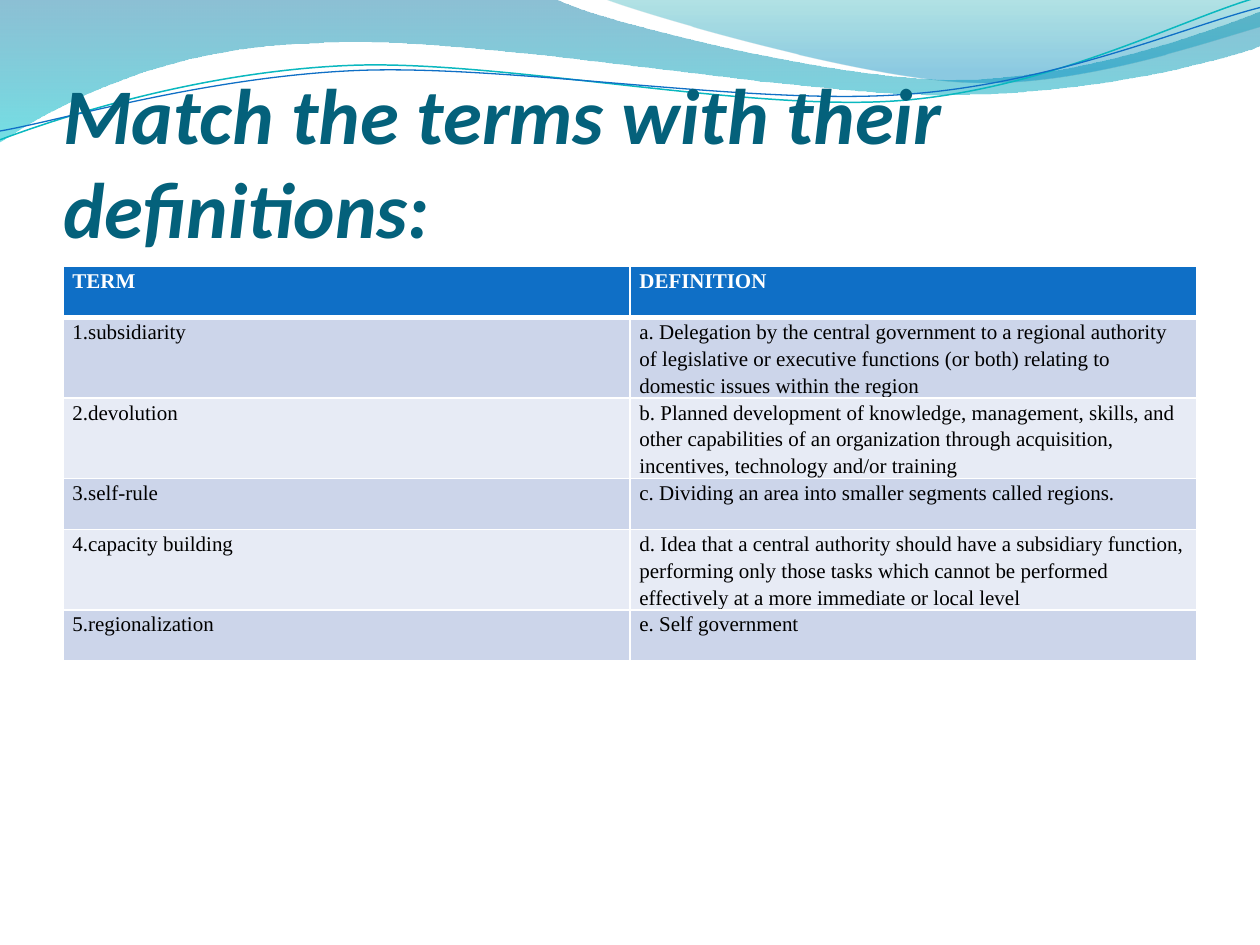
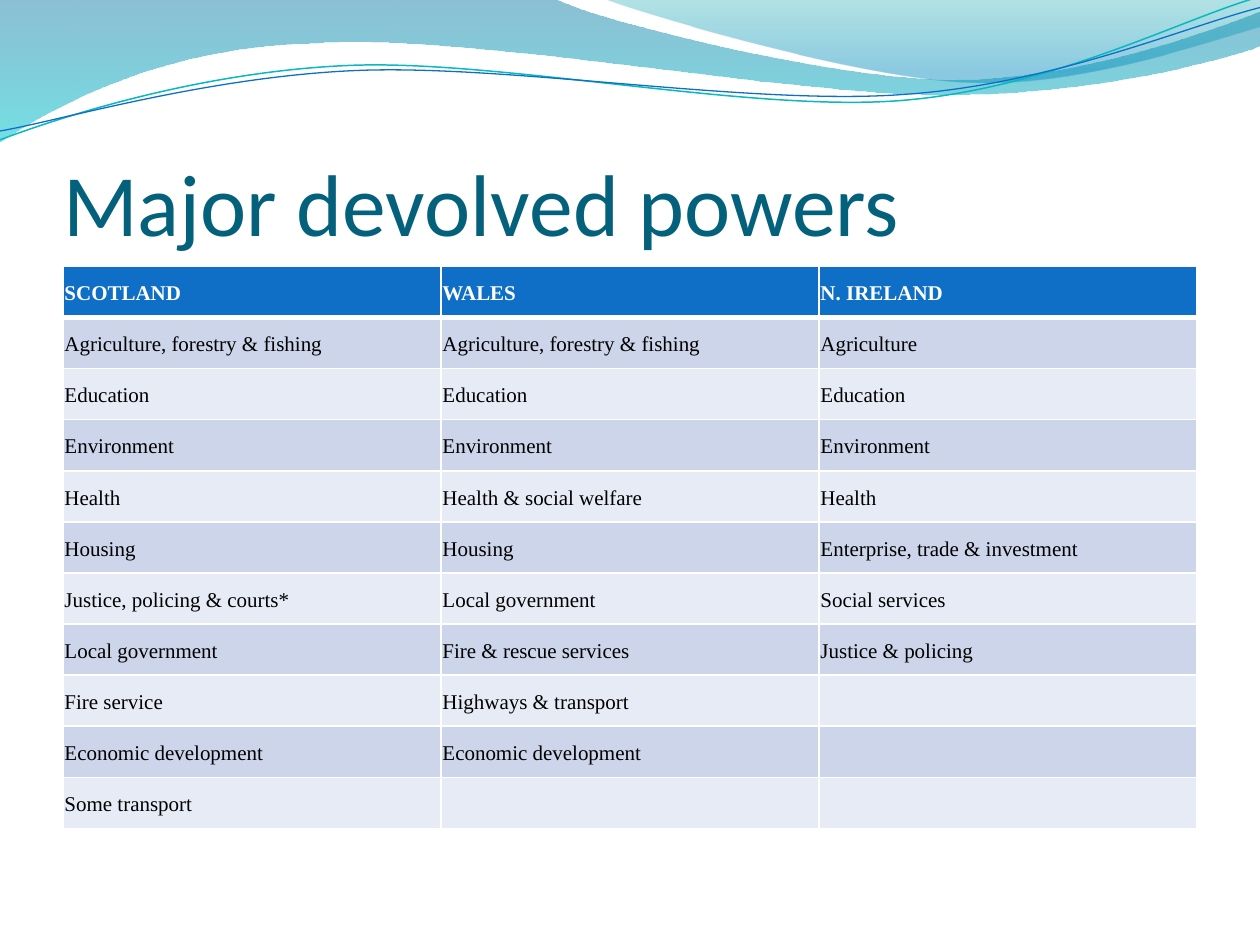
from dataclasses import dataclass
from itertools import chain, zip_longest

from lxml import etree
from pptx import Presentation
from pptx.dml.color import RGBColor
from pptx.enum import text
from pptx.oxml import ns
from pptx.util import Cm, Pt

TERMS = {
    "TERM": ["1.subsidiarity", "2.devolution", "3.self-rule",
             "4.capacity building", "5.regionalization"],
    "DEFINITION": [
        "a. Delegation by the central government to a regional authority of "
        "legislative or executive functions (or both) relating to domestic "
        "issues within the region",
        "b. Planned development of knowledge, management, skills, and other "
        "capabilities of an organization through acquisition, incentives, "
        "technology and/or training",
        "c. Dividing an area into smaller segments called regions.",
        "d. Idea that a central authority should have a subsidiary function, "
        "performing only those tasks which cannot be performed effectively "
        "at a more immediate or local level",
        "e. Self government",
    ],
}
POWERS = {
    "SCOTLAND": ["Agriculture, forestry & fishing", "Education", "Environment",
                 "Health", "Housing", "Justice, policing & courts*",
                 "Local government", "Fire service", "Economic development",
                 "Some transport"],
    "WALES": ["Agriculture, forestry & fishing", "Education", "Environment",
              "Health & social welfare", "Housing", "Local government",
              "Fire & rescue services", "Highways & transport",
              "Economic development"],
    "N. IRELAND": ["Agriculture", "Education", "Environment", "Health",
                   "Enterprise, trade & investment", "Social services",
                   "Justice & policing"],
}
PAGES = [
    dict(title="Match the terms with their definitions:", size=45, strong=True,
         columns=TERMS, anchor=text.MSO_ANCHOR.TOP, margins=(0.19, 0)),
    dict(title="Major devolved powers", size=50, strong=False,
         columns=POWERS, anchor=text.MSO_ANCHOR.MIDDLE, margins=(0.03, 0.03)),
]


@dataclass(frozen=True)
class Theme:
    title_font: str = "Calibri"
    table_font: str = "Times New Roman"
    table_size: int = 12
    title: str = "04617B"
    header: str = "0F6FC6"
    bands: tuple = ("CCD5EA", "E7EBF5")
    ink: str = "000000"
    paper: str = "FFFFFF"
    # gradient stops: position, colour, opacity in percent
    left_wave: tuple = ((0, "0074A1", 45), (1, "00C6CF", 55))
    right_wave: tuple = ((0, "00A1A9", 30), (0.8, "008BBF", 45))
    teal_line: tuple = ("0AB8BF", 0.85)
    blue_line: tuple = ("0F6FC6", 0.75)


THEME = Theme()

# Wave outlines in tenths of the page width: a start, then steps that are
# either one point (straight) or three points (Bézier curve).
WAVE_UNIT = Cm(2.54)
FILLED_WAVES = [
    (THEME.left_wave, (0, 0), [
        [(4.4, -0.01)],
        [(4.76, 0.17), (6.64, 0.63), (7.58, 0.63)],
        [(8.53, 0.63), (9.58, 0.26), (10, 0.09)],
        [(10.01, 0.36)],
        [(9.83, 0.44), (8.7, 0.76), (7.46, 0.75)],
        [(6.22, 0.75), (3.82, 0.28), (2.57, 0.34)],
        [(1.29, 0.36), (0.46, 0.83), (-0.01, 1.13)],
        [(0, 0)]]),
    (THEME.right_wave, (4.79, -0.01), [
        [(5.09, 0.11), (6.82, 0.62), (7.69, 0.65)],
        [(8.56, 0.69), (9.61, 0.32), (10, 0.21)],
        [(10, 0)],
        [(4.79, -0.01)]]),
]
LINE_WAVES = [
    (THEME.teal_line, (0, 1.11), [
        [(0.48, 0.93), (1.58, 0.57), (2.77, 0.52)],
        [(3.95, 0.47), (5.93, 0.89), (7.13, 0.8)],
        [(8.33, 0.71), (9.38, 0.15), (9.98, -0.02)]]),
    (THEME.blue_line, (0, 1.04), [
        [(0.47, 0.96), (1.64, 0.61), (2.83, 0.56)],
        [(4.03, 0.51), (5.97, 0.84), (7.17, 0.75)],
        [(8.36, 0.67), (9.41, 0.21), (10, 0.06)]]),
]

LEFT, WIDTH = Cm(1.27), Cm(22.86)
TITLE_TOP, TITLE_HEIGHT = Cm(1.96), Cm(3.17)
TABLE_TOP, ROW_HEIGHT = Cm(5.37), Cm(1.03)


def rgb(code):
    return RGBColor.from_string(code)


def draw_wave(page, start, steps, close):
    """Draw straight segments, then join each three-point step into a curve."""
    points = [(x * WAVE_UNIT, y * WAVE_UNIT)
              for x, y in chain([start], *steps)]
    builder = page.shapes.build_freeform(*points[0])
    builder.add_line_segments(points[1:], close=close)
    wave = builder.convert_to_shape()
    wave.shadow.inherit = False
    segments = iter(list(wave.element.iter(ns.qn("a:lnTo"))))
    for step in steps:
        parts = [next(segments) for _ in step]
        if len(parts) == 3:
            curve = etree.Element(ns.qn("a:cubicBezTo"))
            parts[0].addprevious(curve)
            for part in parts:
                curve.append(part[0])
                part.getparent().remove(part)
    return wave


def fill_gradient(wave, stops):
    wave.fill.gradient()
    wave.fill.gradient_angle = 270
    for stop, (position, code, _) in zip(wave.fill.gradient_stops, stops):
        stop.position = position
        stop.color.rgb = rgb(code)
    colours = wave.element.iter(ns.qn("a:srgbClr"))
    for colour, (_, _, opacity) in zip(list(colours), stops):
        etree.SubElement(colour, ns.qn("a:alpha"), val=str(opacity * 1000))


def add_waves_to_master(page):
    """Draw the waves on a page, then move them to the back of its master."""
    waves = []
    for stops, start, steps in FILLED_WAVES:
        wave = draw_wave(page, start, steps, close=True)
        fill_gradient(wave, stops)
        wave.line.fill.background()
        waves.append(wave)
    for (code, weight), start, steps in LINE_WAVES:
        wave = draw_wave(page, start, steps, close=False)
        wave.fill.background()
        wave.line.color.rgb = rgb(code)
        wave.line.width = Pt(weight)
        waves.append(wave)
    tree = page.slide_layout.slide_master.element.cSld.spTree
    for place, wave in enumerate(waves, start=2):
        tree.insert(place, wave.element)


def style_font(para, name, size, code, bold, italic=False):
    font = para.font
    font.name, font.size = name, Pt(size)
    font.bold, font.italic = bold, italic
    font.color.rgb = rgb(code)


def set_title(page, title, size, strong):
    box = page.shapes.title
    box.left, box.top, box.width, box.height = LEFT, TITLE_TOP, WIDTH, TITLE_HEIGHT
    frame = box.text_frame
    frame.text = title
    frame.auto_size = text.MSO_AUTO_SIZE.NONE
    frame.vertical_anchor = text.MSO_ANCHOR.BOTTOM
    frame.margin_left = frame.margin_right = frame.margin_bottom = 0
    frame.margin_top = Cm(0.13)
    para = frame.paragraphs[0]
    para.alignment = text.PP_ALIGN.LEFT
    style_font(para, THEME.title_font, size, THEME.title, strong, strong)


def set_borders(cell, bottom):
    properties = cell._tc.get_or_add_tcPr()
    sides = {"lnL": 1, "lnR": 1, "lnT": 1, "lnB": bottom}
    for place, (side, weight) in enumerate(sides.items()):
        border = etree.Element(ns.qn(f"a:{side}"), w=str(Pt(weight)))
        fill = etree.SubElement(border, ns.qn("a:solidFill"))
        etree.SubElement(fill, ns.qn("a:srgbClr"), val=THEME.paper)
        properties.insert(place, border)


def add_grid(page, columns, anchor, margins):
    rows = [list(columns), *zip_longest(*columns.values(), fillvalue="")]
    table = page.shapes.add_table(len(rows), len(columns), LEFT, TABLE_TOP,
                                  WIDTH, ROW_HEIGHT * len(rows)).table
    side, edge = map(Cm, margins)
    for r, row in enumerate(rows):
        is_header = r == 0
        for c, words in enumerate(row):
            cell = table.cell(r, c)
            cell.text = words
            cell.vertical_anchor = anchor
            cell.margin_left = cell.margin_right = side
            cell.margin_top = cell.margin_bottom = edge
            cell.fill.solid()
            cell.fill.fore_color.rgb = rgb(
                THEME.header if is_header else THEME.bands[(r - 1) % 2])
            set_borders(cell, bottom=3 if is_header else 1)
            para = cell.text_frame.paragraphs[0]
            para.line_spacing = 1.15
            style_font(para, THEME.table_font, THEME.table_size,
                       THEME.paper if is_header else THEME.ink, is_header)


def main():
    deck = Presentation()
    deck.slide_width, deck.slide_height = Cm(25.4), Cm(19.05)
    layout = deck.slide_layouts.get_by_name("Title Only")
    for number, plan in enumerate(PAGES):
        page = deck.slides.add_slide(layout)
        if number == 0:
            add_waves_to_master(page)
        set_title(page, plan["title"], plan["size"], plan["strong"])
        add_grid(page, plan["columns"], plan["anchor"], plan["margins"])
    deck.save("out.pptx")


if __name__ == "__main__":
    main()
